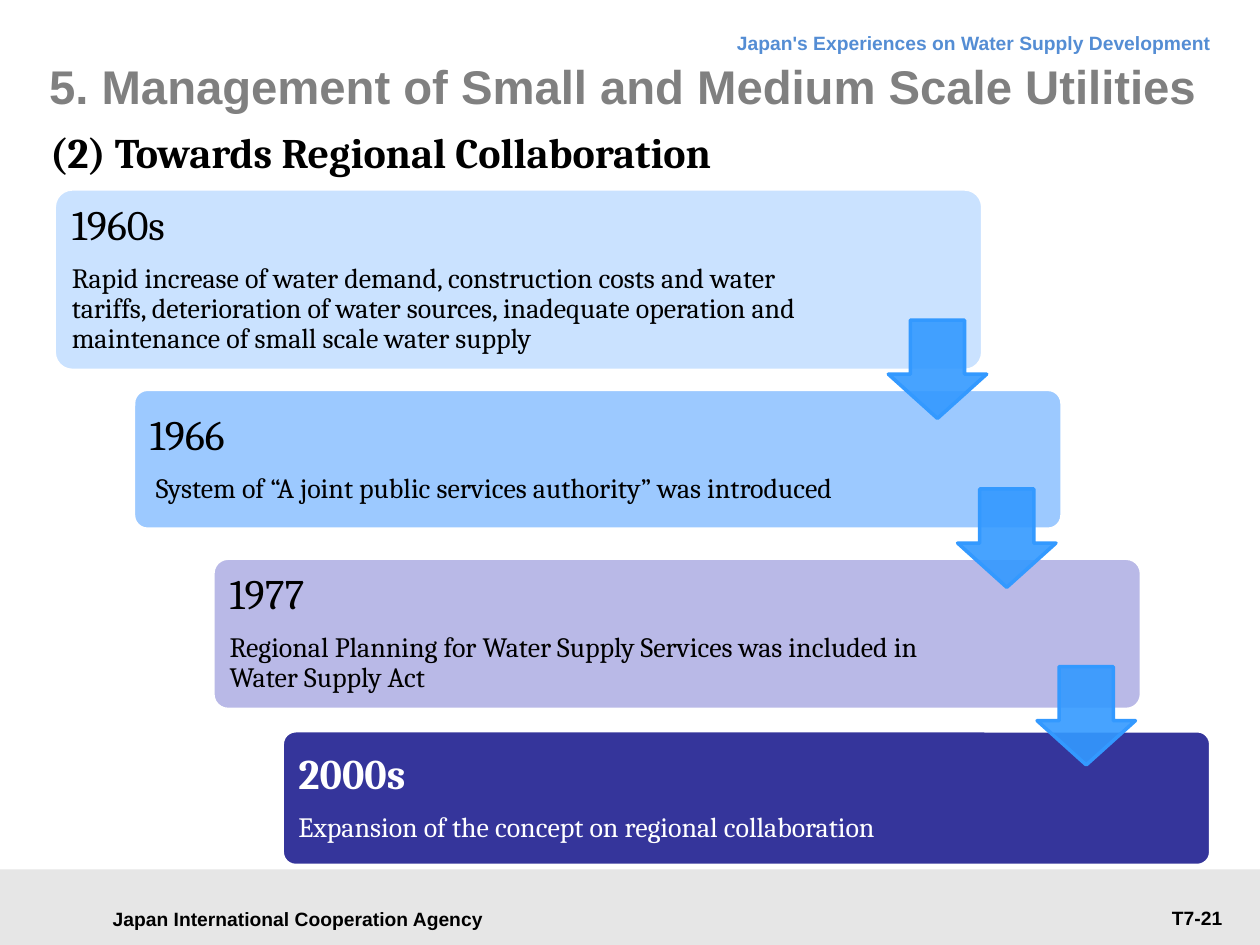
"""Build the slide on the path towards regional collaboration of water utilities."""
from lxml.etree import SubElement
from pptx import Presentation
from pptx.dml.color import RGBColor
from pptx.enum.shapes import MSO_SHAPE
from pptx.enum.text import MSO_ANCHOR, MSO_AUTO_SIZE, PP_ALIGN
from pptx.oxml.ns import qn
from pptx.util import Pt

BLACK = RGBColor(0x00, 0x00, 0x00)
WHITE = RGBColor(0xFF, 0xFF, 0xFF)
GREY = RGBColor(0x80, 0x80, 0x80)
FOOTER_GREY = RGBColor(0xE6, 0xE6, 0xE6)
HEADER_BLUE = RGBColor(0x54, 0x8D, 0xD4)
ARROW_BLUE = RGBColor(0x33, 0x99, 0xFF)
PALE_BLUE = RGBColor(0xCA, 0xE2, 0xFF)
LIGHT_BLUE = RGBColor(0x9C, 0xC9, 0xFF)
LILAC = RGBColor(0xB9, 0xB9, 0xE7)
INDIGO = RGBColor(0x35, 0x35, 0x9B)

TITLE = "5. Management of Small and Medium Scale Utilities"
HEADING = "(2) Towards Regional Collaboration"
HEADER = "Japan's Experiences on Water Supply Development"
AGENCY = "Japan International Cooperation Agency"
PAGE = "T7-21"

STAGES = [
    dict(year="1960s", left=31, top=108, height=103.7, fill=PALE_BLUE, color=BLACK, bold=False,
         event="Rapid increase of water demand, construction costs and water tariffs, "
               "deterioration of water sources, inadequate operation and maintenance "
               "of small scale water supply"),
    dict(year="1966", left=76.3, top=222.5, height=79.9, fill=LIGHT_BLUE, color=BLACK, bold=False,
         event=" System of “A joint public services authority” was introduced"),
    dict(year="1977", left=121.7, top=319, height=86.4, fill=LILAC, color=BLACK, bold=False,
         event="Regional Planning for Water Supply Services was included in Water Supply Act"),
    dict(year="2000s", left=161.3, top=417.6, height=77, fill=INDIGO, color=WHITE, bold=True,
         event="Expansion of the concept on regional collaboration"),
]
ARROW_CORNERS = [(507.6, 182.9), (547.2, 279.4), (592.6, 380.9)]
STAGE_WIDTH = 530.6
ARROW_SIZE = 56.2


def write(paragraph, text, *, size, color, font="Arial", bold=True,
          align=PP_ALIGN.LEFT, line=None, after=None):
    paragraph.text = text
    paragraph.alignment = align
    if line is not None:
        paragraph.line_spacing = line
    if after is not None:
        paragraph.space_after = Pt(after)
    style = paragraph.runs[0].font
    style.name, style.size, style.bold = font, Pt(size), bold
    style.color.rgb = color


def set_frame(frame, insets, anchor=MSO_ANCHOR.TOP, wrap=True):
    frame.auto_size = MSO_AUTO_SIZE.NONE
    frame.word_wrap = wrap
    frame.vertical_anchor = anchor
    (frame.margin_left, frame.margin_top,
     frame.margin_right, frame.margin_bottom) = map(Pt, insets)


def add_label(slide, box, text, insets=(7.2, 3.6, 7.2, 3.6),
              anchor=MSO_ANCHOR.TOP, wrap=True, **style):
    frame = slide.shapes.add_textbox(*map(Pt, box)).text_frame
    set_frame(frame, insets, anchor, wrap)
    write(frame.paragraphs[0], text, **style)


def add_block(slide, kind, box, fill, outline=None, adjustments=()):
    block = slide.shapes.add_shape(kind, *map(Pt, box))
    block.shadow.inherit = False
    block.fill.solid()
    block.fill.fore_color.rgb = fill
    if outline is None:
        block.line.fill.background()
    else:
        block.line.color.rgb = outline
        block.line.width = Pt(2)
    for index, value in enumerate(adjustments):
        block.adjustments[index] = value
    return block


def add_stage(slide, stage):
    box = (stage["left"], stage["top"], STAGE_WIDTH, stage["height"])
    card = add_block(slide, MSO_SHAPE.ROUNDED_RECTANGLE, box, stage["fill"], WHITE, [0.1])
    frame = card.text_frame
    set_frame(frame, (7, 7, 101, 7), MSO_ANCHOR.MIDDLE)
    shared = dict(color=stage["color"], font="Cambria", line=0.9)
    write(frame.paragraphs[0], stage["year"], size=24, bold=stage["bold"], after=8.4, **shared)
    write(frame.add_paragraph(), stage["event"], size=16, bold=False, after=5.6, **shared)


def add_arrow(slide, left, top):
    arrow = add_block(slide, MSO_SHAPE.DOWN_ARROW, (left, top, ARROW_SIZE, ARROW_SIZE),
                      ARROW_BLUE, ARROW_BLUE, [0.55, 0.45])
    fill_color = arrow.fill._xPr.find(qn("a:solidFill"))[0]
    SubElement(fill_color, qn("a:alpha"), val="90000")


def main():
    deck = Presentation()
    deck.slide_width, deck.slide_height = Pt(720), Pt(540)
    slide = deck.slides.add_slide(deck.slide_layouts[5])

    add_block(slide, MSO_SHAPE.RECTANGLE, (0, 496.8, 720, 43.2), FOOTER_GREY)
    add_label(slide, (51.1, 512.6, 238.3, 24.5), AGENCY, anchor=MSO_ANCHOR.MIDDLE,
              size=11, color=BLACK, align=PP_ALIGN.CENTER)
    add_label(slide, (195.8, 9.4, 503.3, 27.4), HEADER, size=11, color=HEADER_BLUE,
              align=PP_ALIGN.RIGHT, line=Pt(18))
    add_label(slide, (592.6, 514.1, 113, 20.9), PAGE, size=11, color=BLACK,
              align=PP_ALIGN.RIGHT)

    title = slide.shapes.title
    title.left, title.top, title.width, title.height = map(Pt, (28.1, 20.2, 663.1, 56.9))
    set_frame(title.text_frame, (0, 0, 0, 0), MSO_ANCHOR.MIDDLE)
    write(title.text_frame.paragraphs[0], TITLE, size=27, color=GREY)
    add_label(slide, (21.6, 69.1, 401.8, 32.4), HEADING, insets=(7.2, 0, 0, 0), wrap=False,
              size=24, color=BLACK, font="Cambria", line=Pt(32))

    for stage in STAGES:
        add_stage(slide, stage)
    for left, top in ARROW_CORNERS:
        add_arrow(slide, left, top)
    deck.save("out.pptx")


if __name__ == "__main__":
    main()
